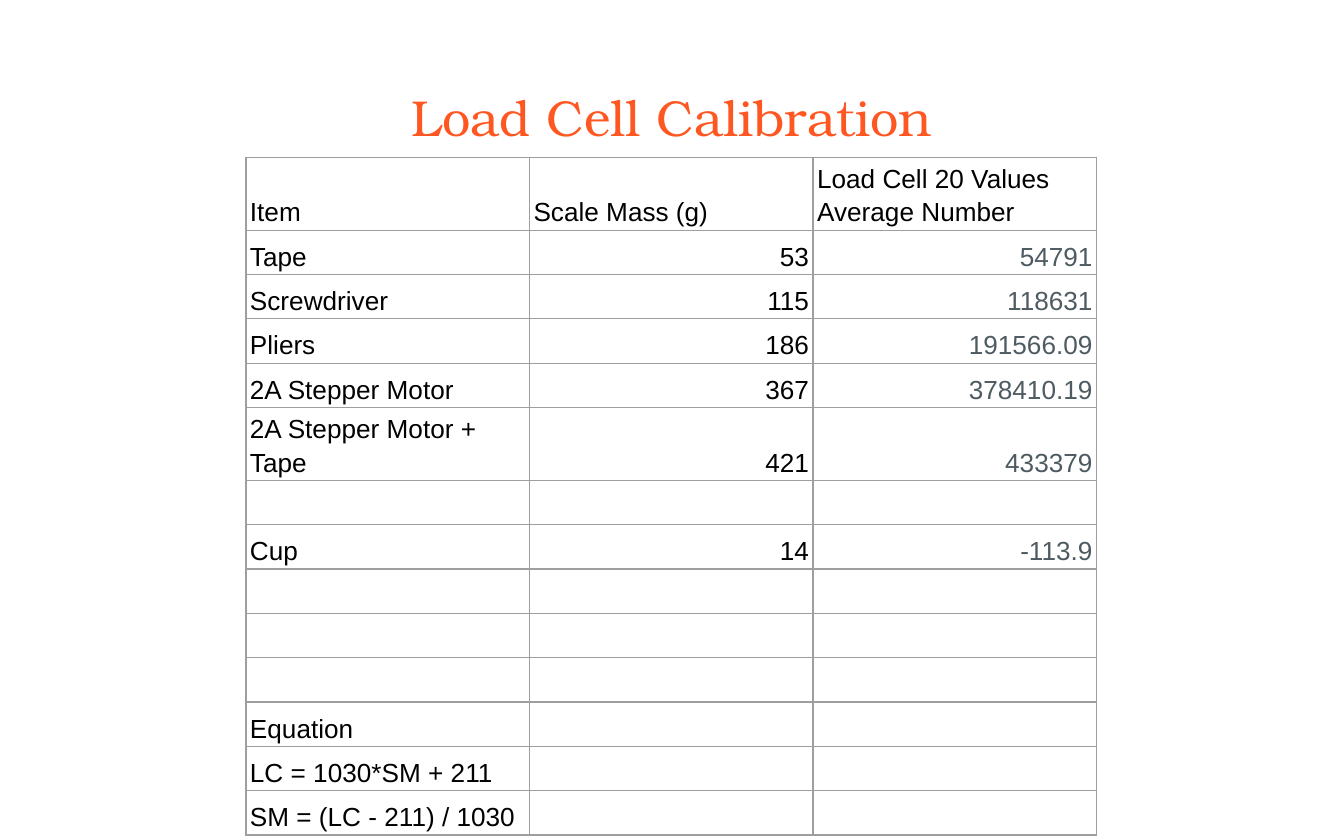
import lxml.etree
import pptx
import pptx.dml.color
import pptx.enum.text
import pptx.oxml.ns
import pptx.util

Inches = pptx.util.Inches
Pt = pptx.util.Pt
qn = pptx.oxml.ns.qn
ALIGN = pptx.enum.text.PP_ALIGN
ANCHOR = pptx.enum.text.MSO_ANCHOR

ORANGE, BLACK, SLATE = "FF5722", "000000", "4E5B61"
WHITE, GRID = "FFFFFF", "9E9E9E"
CELL_SIZE = 14
COLUMN_WIDTH, ROW_HEIGHT = 2.11, 0.33

CALIBRATION = [
    ("Item", "Scale Mass (g)", "Load Cell 20 Values Average Number"),
    ("Tape", "53", "54791"),
    ("Screwdriver", "115", "118631"),
    ("Pliers", "186", "191566.09"),
    ("2A Stepper Motor", "367", "378410.19"),
    ("2A Stepper Motor + Tape", "421", "433379"),
    ("", "", ""),
    ("Cup", "14", "-113.9"),
    ("", "", ""),
    ("", "", ""),
    ("", "", ""),
    ("Equation", "", ""),
    ("LC = 1030*SM + 211", "", ""),
    ("SM = (LC - 211) / 1030", "", ""),
]


def rgb(color):
    return pptx.dml.color.RGBColor.from_string(color)


def format_text(paragraph, font_name, size, color, alignment):
    paragraph.alignment = alignment
    for run in paragraph.runs:
        run.font.name = font_name
        run.font.size = Pt(size)
        run.font.color.rgb = rgb(color)


def add_title(slide, text):
    title = slide.shapes.title
    title.left, title.top = Inches(0.34), Inches(0.54)
    title.width, title.height = Inches(9.32), Inches(0.7)
    frame = title.text_frame
    frame.text = text
    frame.word_wrap = True
    frame.auto_size = pptx.enum.text.MSO_AUTO_SIZE.NONE
    frame.vertical_anchor = ANCHOR.TOP
    frame.margin_left = frame.margin_right = Inches(0.1)
    frame.margin_top = frame.margin_bottom = Inches(0.1)
    format_text(frame.paragraphs[0], "TeX Gyre Bonum", 27, ORANGE, ALIGN.CENTER)


def add_borders(cell, color, width):
    properties = cell._tc.get_or_add_tcPr()
    for side in ("a:lnL", "a:lnR", "a:lnT", "a:lnB"):
        line = lxml.etree.SubElement(properties, qn(side), w=str(Pt(width)))
        fill = lxml.etree.SubElement(line, qn("a:solidFill"))
        lxml.etree.SubElement(fill, qn("a:srgbClr"), val=color)


def fill_cell(cell, text, color, alignment):
    add_borders(cell, GRID, 0.75)
    cell.fill.solid()
    cell.fill.fore_color.rgb = rgb(WHITE)
    cell.vertical_anchor = ANCHOR.BOTTOM
    cell.margin_left = cell.margin_right = Inches(0.03)
    cell.margin_top = cell.margin_bottom = Inches(0.02)
    paragraph = cell.text_frame.paragraphs[0]
    if text:
        paragraph.text = text
        paragraph.line_spacing = 1.15
        format_text(paragraph, "Arial", CELL_SIZE, color, alignment)
    else:
        # Keeps an empty row from growing to the default text size
        lxml.etree.SubElement(paragraph._p, qn("a:endParaRPr"), sz=str(CELL_SIZE * 100))


def add_calibration_table(slide, rows):
    column_count = len(rows[0])
    table = slide.shapes.add_table(
        len(rows), column_count, Inches(1.83), Inches(1.17),
        Inches(COLUMN_WIDTH * column_count), Inches(ROW_HEIGHT * len(rows)),
    ).table
    table.first_row = False
    table.horz_banding = False
    for column in table.columns:
        column.width = Inches(COLUMN_WIDTH)
    for row_index, row in enumerate(rows):
        table.rows[row_index].height = Inches(ROW_HEIGHT)
        for column_index, text in enumerate(row):
            # Measurements align right; load cell readings are slate
            is_number = row_index > 0 and column_index > 0
            color = SLATE if is_number and column_index == 2 else BLACK
            alignment = ALIGN.RIGHT if is_number else ALIGN.LEFT
            fill_cell(table.cell(row_index, column_index), text, color, alignment)


def main():
    presentation = pptx.Presentation()
    presentation.slide_width = Inches(10)
    presentation.slide_height = Inches(6.25)
    slide = presentation.slides.add_slide(presentation.slide_layouts[5])
    slide.background.fill.solid()
    slide.background.fill.fore_color.rgb = rgb(WHITE)

    add_title(slide, "Load Cell Calibration")
    add_calibration_table(slide, CALIBRATION)
    presentation.save("out.pptx")


if __name__ == "__main__":
    main()
